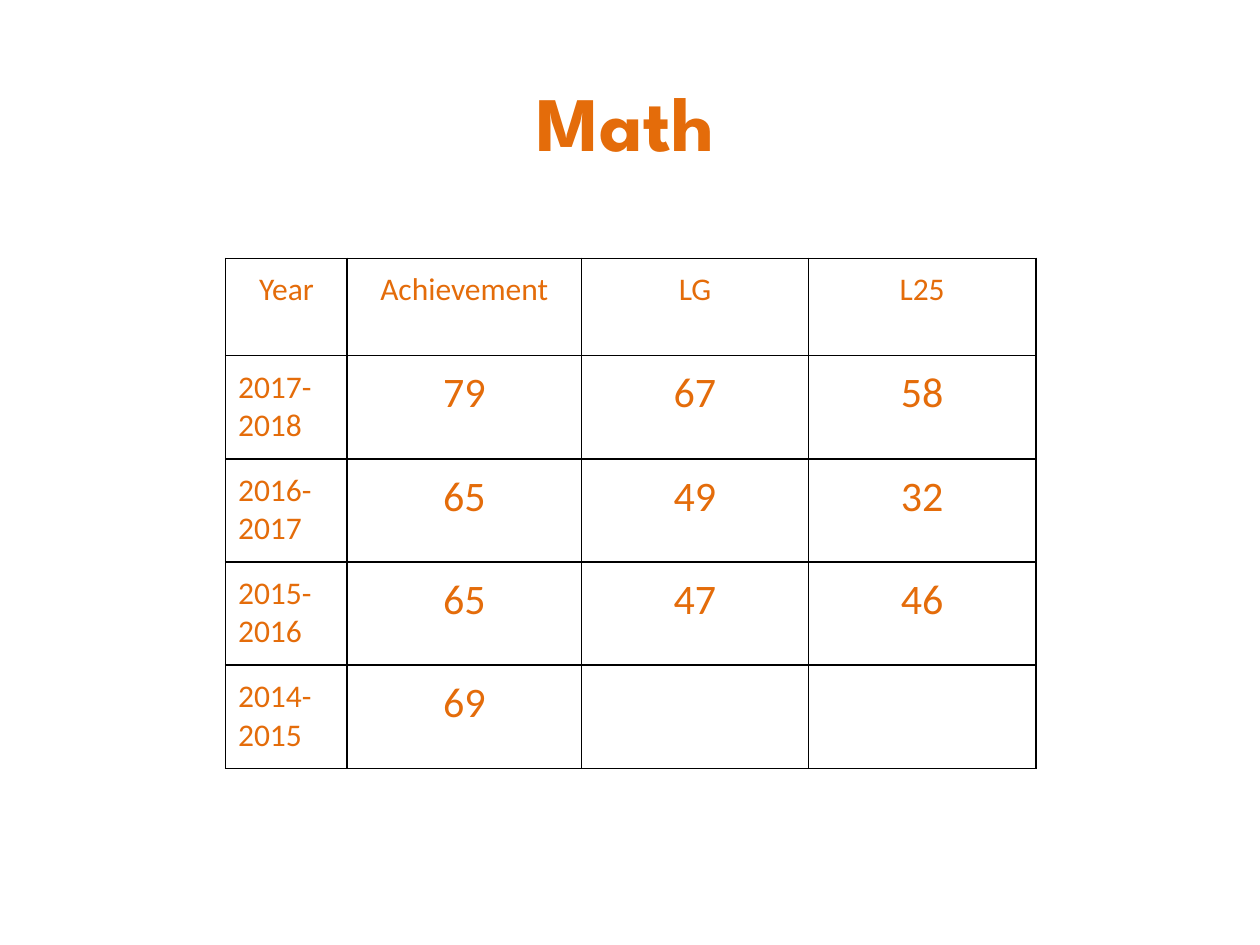
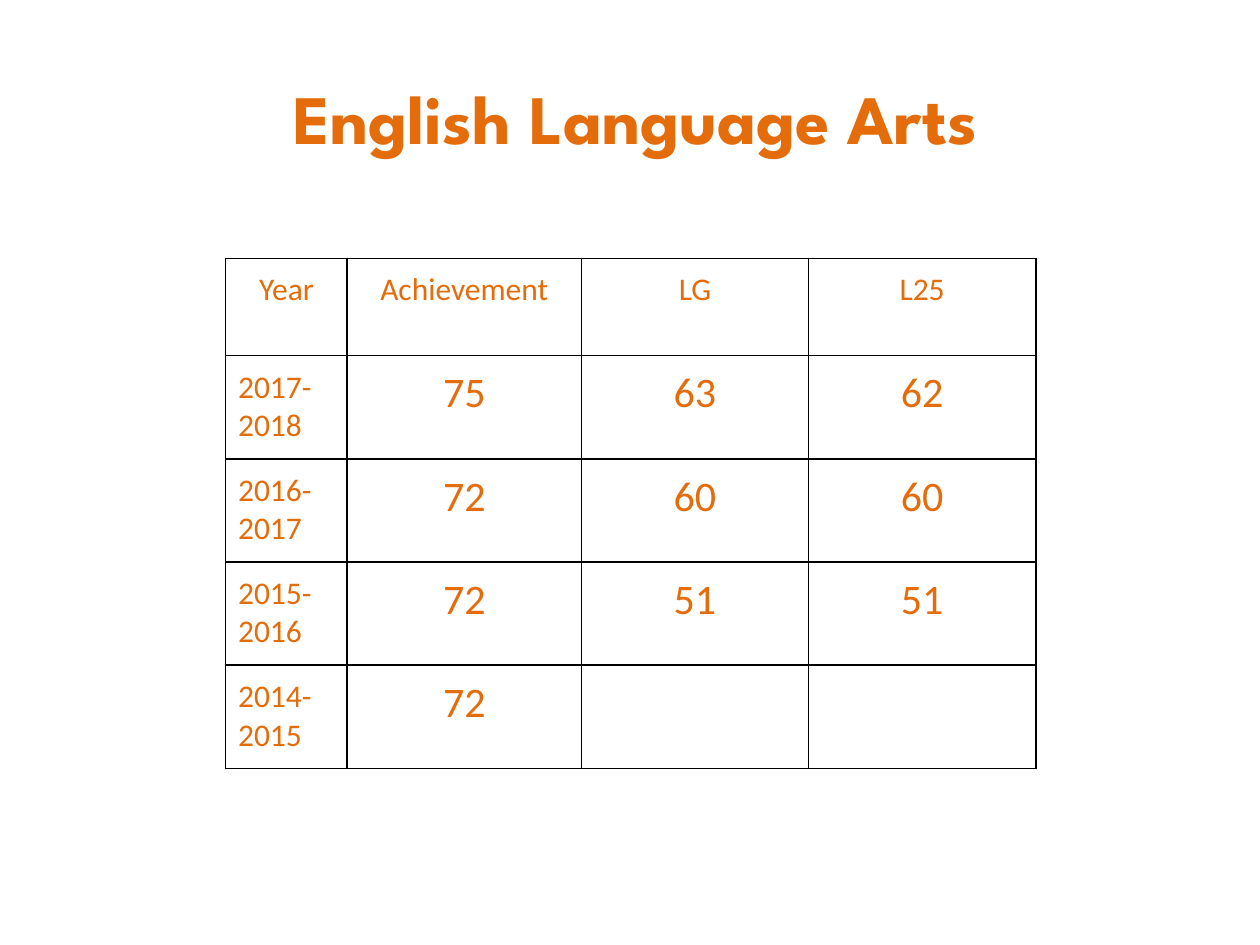
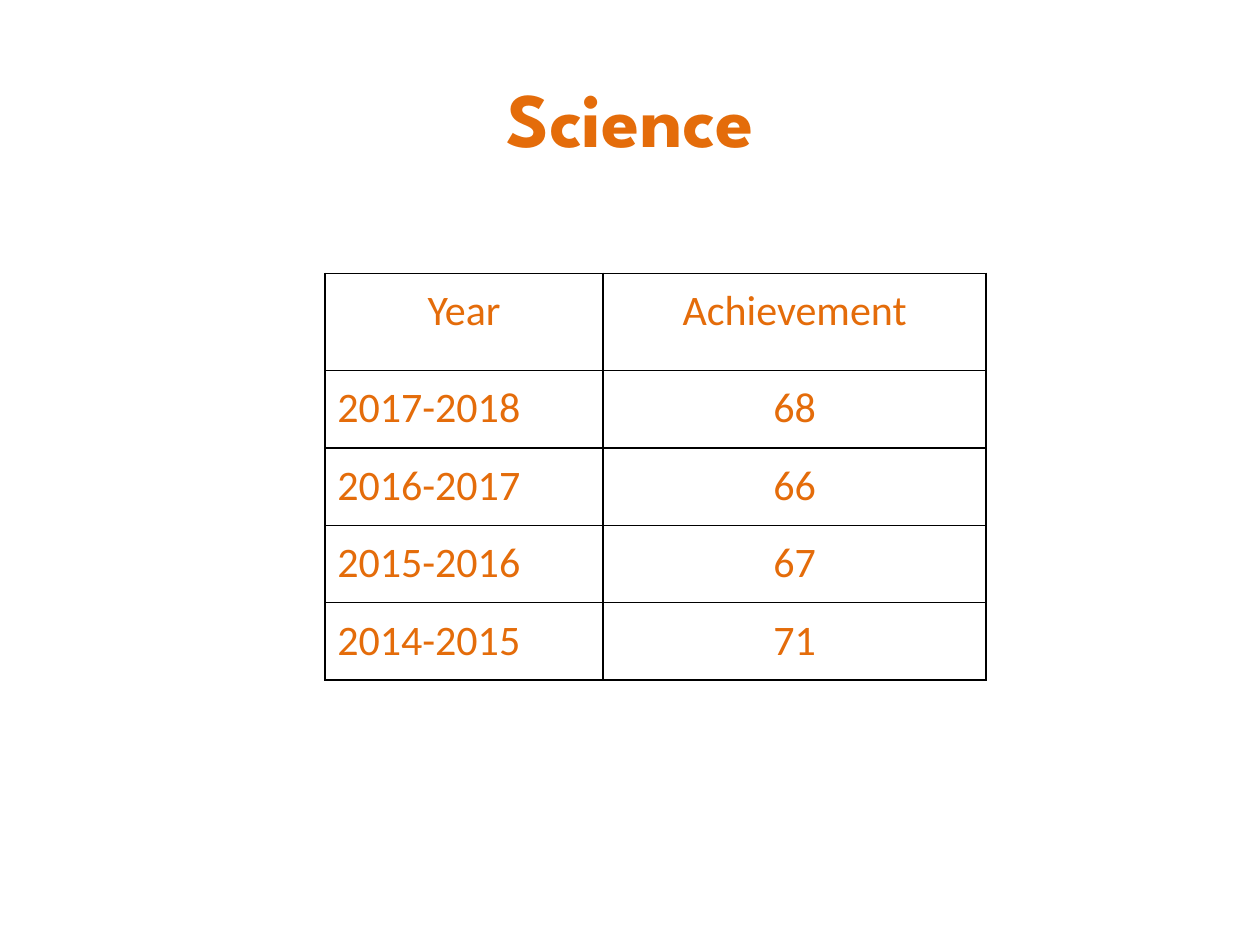
from dataclasses import dataclass

from lxml import etree
from pptx import Presentation
from pptx.dml.color import RGBColor
from pptx.enum.text import MSO_ANCHOR, MSO_AUTO_SIZE, PP_ALIGN
from pptx.oxml.ns import qn
from pptx.util import Cm, Pt

CENTER, LEFT = PP_ALIGN.CENTER, PP_ALIGN.LEFT
MIDDLE = MSO_ANCHOR.MIDDLE
NO_AUTOFIT = MSO_AUTO_SIZE.NONE

ORANGE, BLACK, WHITE = "E46C0A", "000000", "FFFFFF"
TITLE_FONT, TABLE_FONT = "League Spartan", "Calibri"
TITLE_ONLY = 5
TITLE_HEIGHT, HEADER_HEIGHT, CELL_MARGIN = 3.18, 1.96, 0.25
BORDER_WIDTH = 1
YEARS = ("2017-2018", "2016-2017", "2015-2016", "2014-2015")


@dataclass(frozen=True)
class Title:
    text: str
    left: float
    top: float
    width: float
    size: float


@dataclass(frozen=True)
class TableStyle:
    left: float
    top: float
    columns: tuple[float, ...]
    row_height: float
    headings: tuple[str, ...]
    label_size: int
    score_size: int


@dataclass(frozen=True)
class SubjectPage:
    title: Title
    style: TableStyle
    scores: tuple[tuple[str, ...], ...]


THREE_MEASURES = TableStyle(4.55, 5.21, (2.45, 4.72, 4.58, 4.58), 2.08,
                            ("Year", "Achievement", "LG", "L25"), 18, 24)
ONE_MEASURE = TableStyle(6.55, 5.51, (5.61, 7.72), 1.56,
                         ("Year", "Achievement"), 24, 24)

PAGES = (
    SubjectPage(Title("Math", 5.72, 0.84, 13.77, 44), THREE_MEASURES,
                (("79", "67", "58"), ("65", "49", "32"),
                 ("65", "47", "46"), ("69", "", ""))),
    SubjectPage(Title("English Language Arts", 4.88, 0.76, 15.88, 39.6), THREE_MEASURES,
                (("75", "63", "62"), ("72", "60", "60"),
                 ("72", "51", "51"), ("72", "", ""))),
    SubjectPage(Title("Science", 1.27, 0.76, 22.86, 44), ONE_MEASURE,
                (("68",), ("66",), ("67",), ("71",))),
)


def color(value: str) -> RGBColor:
    return RGBColor.from_string(value)


def format_text(para, font_name: str, size: float, align, bold: bool = False) -> None:
    para.alignment = align
    para.font.name = font_name
    para.font.size = Pt(size)
    para.font.bold = bold
    para.font.color.rgb = color(ORANGE)


def add_borders(cell) -> None:
    properties = cell._tc.get_or_add_tcPr()
    for side in ("a:lnL", "a:lnR", "a:lnT", "a:lnB"):
        line = etree.SubElement(properties, qn(side), w=str(Pt(BORDER_WIDTH)))
        fill = etree.SubElement(line, qn("a:solidFill"))
        etree.SubElement(fill, qn("a:srgbClr"), val=BLACK)


def draw_title(page, title: Title) -> None:
    box = page.shapes.title
    box.left, box.top = Cm(title.left), Cm(title.top)
    box.width, box.height = Cm(title.width), Cm(TITLE_HEIGHT)
    frame = box.text_frame
    frame.text = title.text
    frame.word_wrap = True
    frame.auto_size = NO_AUTOFIT
    frame.vertical_anchor = MIDDLE
    format_text(frame.paragraphs[0], TITLE_FONT, title.size, CENTER, bold=True)


def draw_cell(cell, text: str, size: float, align) -> None:
    cell.margin_left = cell.margin_right = Cm(CELL_MARGIN)
    cell.margin_top = cell.margin_bottom = Cm(CELL_MARGIN)
    add_borders(cell)
    cell.fill.solid()
    cell.fill.fore_color.rgb = color(WHITE)
    cell.text = text
    format_text(cell.text_frame.paragraphs[0], TABLE_FONT, size, align)


def draw_table(page, style: TableStyle, scores: tuple[tuple[str, ...], ...]) -> None:
    rows = [style.headings] + [(year, *values) for year, values in zip(YEARS, scores)]
    heights = [HEADER_HEIGHT] + [style.row_height] * len(scores)
    table = page.shapes.add_table(
        len(rows), len(style.columns), Cm(style.left), Cm(style.top),
        Cm(sum(style.columns)), Cm(sum(heights))).table
    table.first_row = table.horz_banding = False
    for column, width in zip(table.columns, style.columns):
        column.width = Cm(width)
    for row_index, (texts, height) in enumerate(zip(rows, heights)):
        table.rows[row_index].height = Cm(height)
        for column_index, text in enumerate(texts):
            is_heading, is_year = row_index == 0, column_index == 0
            size = style.label_size if is_heading or is_year else style.score_size
            align = LEFT if is_year and not is_heading else CENTER
            draw_cell(table.cell(row_index, column_index), text, size, align)


def main() -> None:
    deck = Presentation()
    deck.slide_width, deck.slide_height = Cm(25.4), Cm(19.05)
    for subject in PAGES:
        page = deck.slides.add_slide(deck.slide_layouts[TITLE_ONLY])
        draw_title(page, subject.title)
        draw_table(page, subject.style, subject.scores)
    deck.save("out.pptx")


if __name__ == "__main__":
    main()
